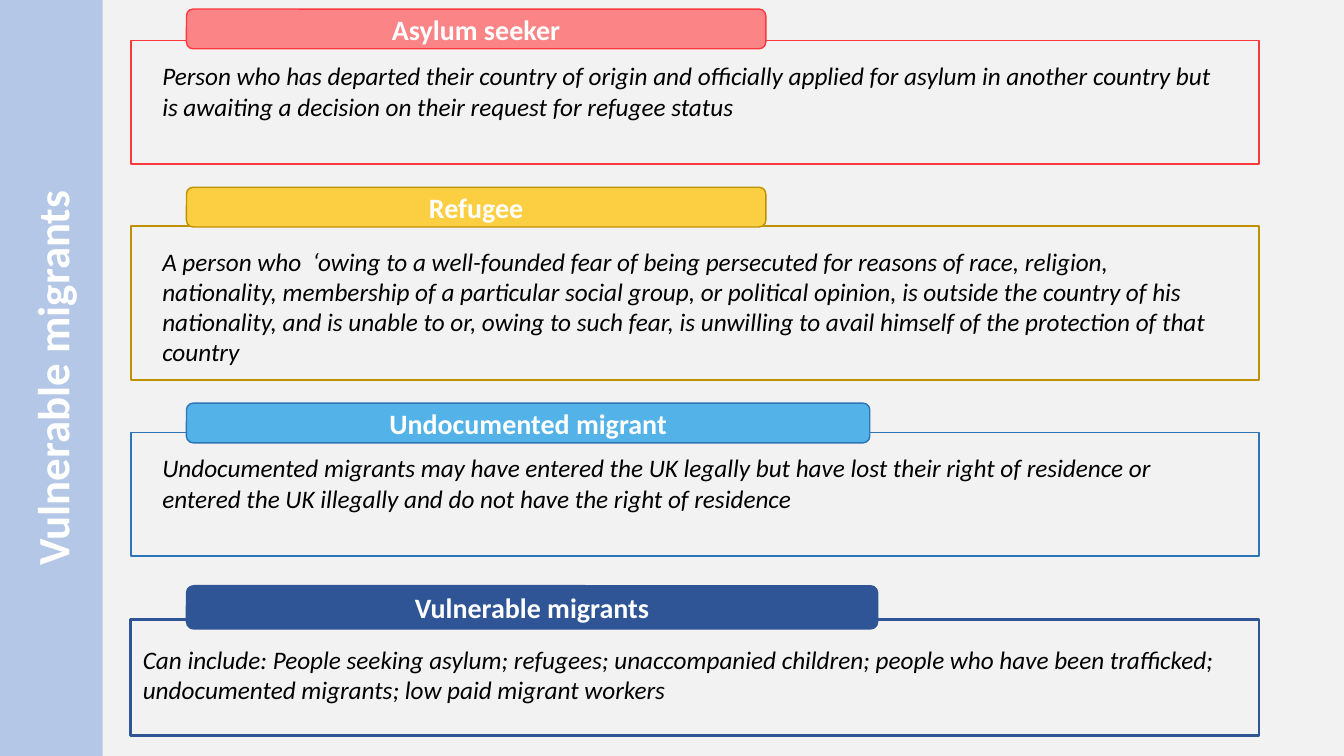
from pptx import Presentation
from pptx.dml.color import RGBColor
from pptx.enum.shapes import MSO_SHAPE
from pptx.enum.text import MSO_ANCHOR, PP_ALIGN
from pptx.util import Cm, Pt

# Content
TITLE = "Vulnerable migrants"
COLORS = {
    "page": "F2F2F2", "sidebar": "B4C7E7", "white": "FFFFFF", "black": "000000",
    "red": "F9393E", "pink": "FB8486", "gold": "BF9000", "yellow": "FCCF42",
    "blue": "2E75B6", "sky": "53B2E8", "navy": "2F5597",
}
WIDE = (0.79, 0.51, 0.79, 0.3)   # insets: left, top, right, bottom (cm)
TIGHT = (0.3, 0.61, 0.3, 0.13)
DEFINITIONS = [
    {"term": "Asylum seeker",
     "text": "Person who has departed their country of origin and officially applied for "
             "asylum in another country but is awaiting a decision on their request for "
             "refugee status",
     "line": "red", "fill": "pink", "weight": 1.25, "insets": WIDE,
     "box": (1.02, 3.12), "tag": (0.23, 14.6, 1)},
    {"term": "Refugee",
     "text": "A person who  ‘owing to a well-founded fear of being persecuted for reasons "
             "of race, religion, nationality, membership of a particular social group, or "
             "political opinion, is outside the country of his nationality, and is unable "
             "to or, owing to such fear, is unwilling to avail himself of the protection "
             "of that country",
     "line": "gold", "fill": "yellow", "weight": 1.25, "insets": WIDE,
     "box": (5.69, 3.89), "tag": (4.72, 14.6, 1)},
    {"term": "Undocumented migrant",
     "text": "Undocumented migrants may have entered the UK legally but have lost their "
             "right of residence or entered the UK illegally and do not have the right of "
             "residence",
     "line": "blue", "fill": "sky", "weight": 1.25, "insets": WIDE,
     "box": (10.9, 3.12), "tag": (10.16, 17.22, 1)},
    {"term": "Vulnerable migrants",
     "text": "Can include: People seeking asylum; refugees; unaccompanied children; people "
             "who have been trafficked; undocumented migrants; low paid migrant workers",
     "line": "navy", "fill": "navy", "weight": 2, "insets": TIGHT,
     "box": (15.62, 2.92), "tag": (14.76, 17.42, 1.09)},
]

# Layout (cm) and text formats
SLIDE_W, SLIDE_H = 33.87, 19.05
SIDEBAR_W = 2.59
BOX_LEFT, BOX_W, TAG_LEFT = 3.3, 28.43, 4.7
BODY = {"size": Pt(18), "italic": True, "name": "Calibri"}
LABEL = {"size": Pt(20), "bold": True, "name": "Calibri"}
HEADING = {**LABEL, "size": Pt(32)}


def rgb(name):
    return RGBColor.from_string(COLORS[name])


def add_box(kind, left, top, width, height, fill=None, line=None, weight=1):
    sp = s.shapes.add_shape(kind, Cm(left), Cm(top), Cm(width), Cm(height))
    sp.shadow.inherit = False
    if fill:
        sp.fill.solid()
        sp.fill.fore_color.rgb = rgb(fill)
    else:
        sp.fill.background()
    if line:
        sp.line.color.rgb = rgb(line)
        sp.line.width = Pt(weight)
    else:
        sp.line.fill.background()
    return sp


def write(sp, text, font, color="white", anchor=MSO_ANCHOR.MIDDLE,
          align=PP_ALIGN.CENTER, insets=None):
    tf = sp.text_frame
    tf.word_wrap = True
    tf.vertical_anchor = anchor
    if insets:
        for side, inset in zip(("left", "top", "right", "bottom"), insets):
            setattr(tf, f"margin_{side}", Cm(inset))
    p = tf.paragraphs[0]
    p.alignment = align
    r = p.add_run()
    r.text = text
    for name, value in font.items():
        setattr(r.font, name, value)
    r.font.color.rgb = rgb(color)


prs = Presentation()
prs.slide_width, prs.slide_height = Cm(SLIDE_W), Cm(SLIDE_H)
s = prs.slides.add_slide(prs.slide_layouts[6])
s.background.fill.solid()
s.background.fill.fore_color.rgb = rgb("page")

# Sidebar, turned to read upwards along the left edge
sp = add_box(MSO_SHAPE.RECTANGLE, (SIDEBAR_W - SLIDE_H) / 2, (SLIDE_H - SIDEBAR_W) / 2,
             SLIDE_H, SIDEBAR_W, fill="sidebar")
sp.rotation = 270
write(sp, TITLE, HEADING)

# Definition boxes, each with its term on the top edge
for d in DEFINITIONS:
    top, height = d["box"]
    sp = add_box(MSO_SHAPE.RECTANGLE, BOX_LEFT, top, BOX_W, height,
                 line=d["line"], weight=d["weight"])
    write(sp, d["text"], BODY, "black", MSO_ANCHOR.TOP, PP_ALIGN.LEFT, d["insets"])
    top, width, height = d["tag"]
    sp = add_box(MSO_SHAPE.ROUNDED_RECTANGLE, TAG_LEFT, top, width, height,
                 fill=d["fill"], line=d["line"])
    write(sp, d["term"], LABEL)

prs.save("out.pptx")
